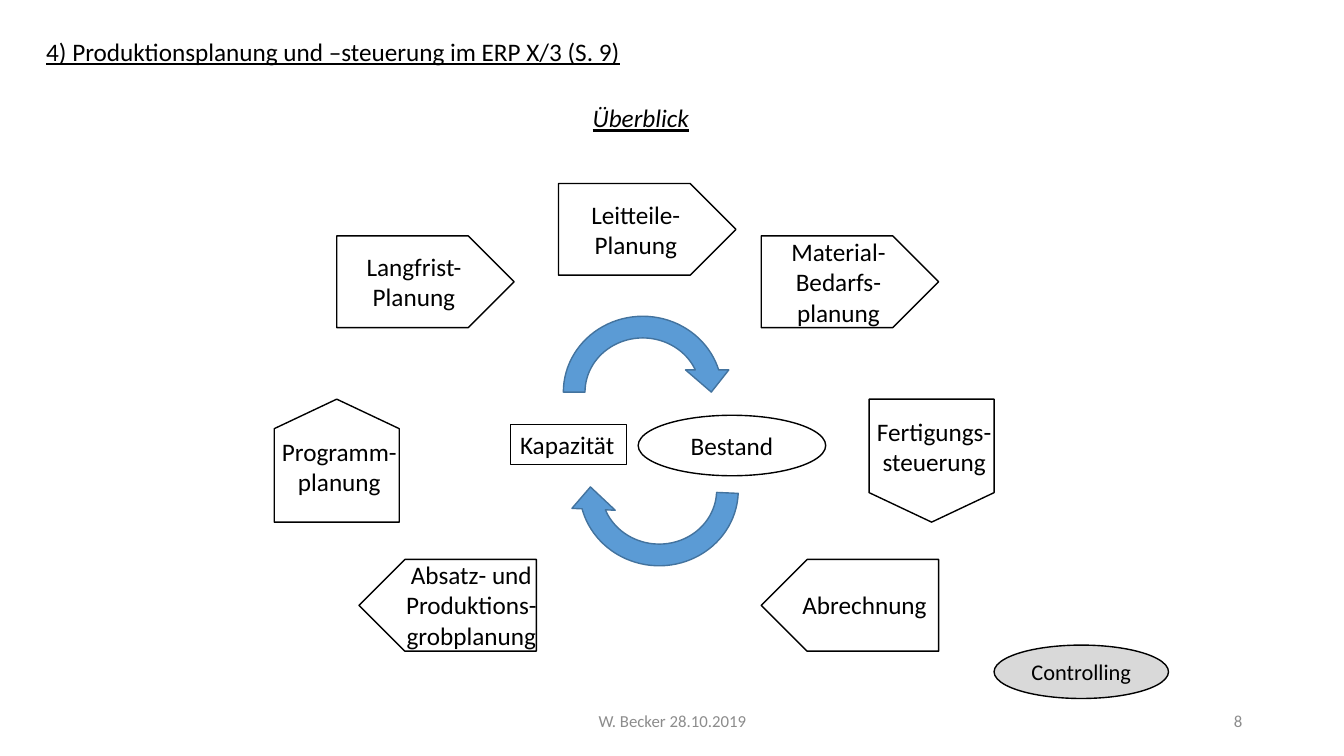
from dataclasses import dataclass, replace
from typing import Optional

from pptx import Presentation
from pptx import util as u
from pptx.dml.color import RGBColor
from pptx.enum import shapes, text

PX = 9144  # EMU per px, 100 px to the inch
BLACK = RGBColor(0, 0, 0)
WHITE = RGBColor(255, 255, 255)
GREY = RGBColor(0x8C, 0x8C, 0x8C)
SILVER = RGBColor(0xD9, 0xD9, 0xD9)
BLUE = RGBColor(0x5B, 0x9B, 0xD5)
NAVY = RGBColor(0x43, 0x73, 0x9E)

KIND = shapes.MSO_SHAPE
LEFT, MID, RIGHT = text.PP_ALIGN.LEFT, text.PP_ALIGN.CENTER, text.PP_ALIGN.RIGHT


@dataclass
class Label:
    words: str
    box: tuple[int, int, int, int]
    size: int = 18
    color: RGBColor = BLACK
    align: text.PP_ALIGN = LEFT
    line: bool = False
    slant: bool = False
    fixed: bool = False


@dataclass
class Form:
    kind: shapes.MSO_SHAPE
    box: tuple[int, int, int, int]
    words: str = ""
    size: int = 18
    fill: Optional[RGBColor] = WHITE
    edge: RGBColor = BLACK
    turn: float = 0
    tip: Optional[float] = None


def emu(box: tuple[int, int, int, int]) -> list[u.Emu]:
    return [u.Emu(n * PX) for n in box]


def write(shape, label: Label) -> None:
    """Set the text; labels that are not fixed fit their box to it."""
    frame = shape.text_frame
    frame.text = label.words
    frame.word_wrap = label.fixed
    if label.fixed:
        frame.vertical_anchor = text.MSO_ANCHOR.MIDDLE
    else:
        frame.vertical_anchor = text.MSO_ANCHOR.TOP
        frame.auto_size = text.MSO_AUTO_SIZE.SHAPE_TO_FIT_TEXT
    for para in frame.paragraphs:
        para.alignment = label.align
        font = para.font
        font.name, font.size = "Calibri", u.Pt(label.size)
        font.color.rgb = label.color
        font.underline, font.italic = label.line, label.slant


def put_label(tree, label: Label) -> None:
    write(tree.add_textbox(*emu(label.box)), label)


def put_form(tree, form: Form):
    shape = tree.add_shape(form.kind, *emu(form.box))
    shape.shadow.inherit = False
    shape.rotation = form.turn
    if form.tip is not None:
        shape.adjustments[0] = form.tip
    if form.fill is None:
        shape.fill.background()
    else:
        shape.fill.solid()
        shape.fill.fore_color.rgb = form.fill
    shape.line.color.rgb = form.edge
    shape.line.width = u.Pt(1)
    if form.words:
        write(shape, Label(form.words, form.box, form.size, align=MID, fixed=True))
    return shape


def plate(left: int, top: int, words: str = "", turn: float = 0) -> Form:
    return Form(KIND.PENTAGON, (left, top, 176, 91), words, turn=turn)


def post(left: int, turn: float) -> Form:
    return Form(KIND.PENTAGON, (left, 395, 122, 124), turn=turn, tip=0.24)


STEPS = [
    plate(334, 234, "Langfrist-\nPlanung"),
    plate(554, 182, "Leitteile-\nPlanung"),
    plate(755, 234, "Material-\nBedarfs-\nplanung"),
]
TURNED = [
    (post(863, 90), Label("Fertigungs-\nsteuerung", (859, 408, 135, 71), align=MID)),
    (plate(755, 555, turn=180), Label("Abrechnung", (786, 580, 145, 40))),
    (plate(356, 555, turn=180),
     Label("Absatz- und\nProduktions-\ngrobplanung", (392, 550, 151, 101), align=MID)),
    (post(273, 270), Label("Programm-\nplanung", (269, 428, 135, 71), align=MID)),
]
STOCK = Form(KIND.OVAL, (633, 412, 186, 60), "Bestand", fill=None)
ARROW = Form(KIND.CIRCULAR_ARROW, (548, 303, 179, 172), fill=BLUE, edge=NAVY)
BACK = replace(ARROW, box=(564, 400, 179, 172), turn=182.5)
CONTROL = Form(KIND.OVAL, (986, 640, 173, 53), "Controlling", 16, SILVER)
LOAD = Label("Kapazität", (506, 421, 115, 40))
LABELS = [
    Label("4) Produktionsplanung und –steuerung im ERP X/3 (S. 9)",
          (36, 31, 601, 40), line=True),
    Label("Überblick", (578, 97, 116, 40), line=True, slant=True),
    Label("W. Becker 28.10.2019", (442, 695, 450, 40), 12, GREY, MID, fixed=True),
    Label("8", (942, 695, 300, 40), 12, GREY, RIGHT, fixed=True),
]


def main() -> None:
    deck = Presentation()
    deck.slide_width, deck.slide_height = u.Emu(1333 * PX), u.Emu(750 * PX)
    tree = deck.slides.add_slide(deck.slide_layouts[6]).shapes
    for label in LABELS:
        put_label(tree, label)
    for step in STEPS:
        put_form(tree, step)
    for form, label in TURNED:
        group = tree.add_group_shape().shapes
        put_form(group, form)
        put_label(group, label)
    load = put_form(tree, Form(KIND.RECTANGLE, LOAD.box, fill=None))
    load.line.width = u.Pt(0.75)
    write(load, LOAD)
    for form in (STOCK, ARROW, BACK, CONTROL):
        put_form(tree, form)
    deck.save("out.pptx")


if __name__ == "__main__":
    main()
